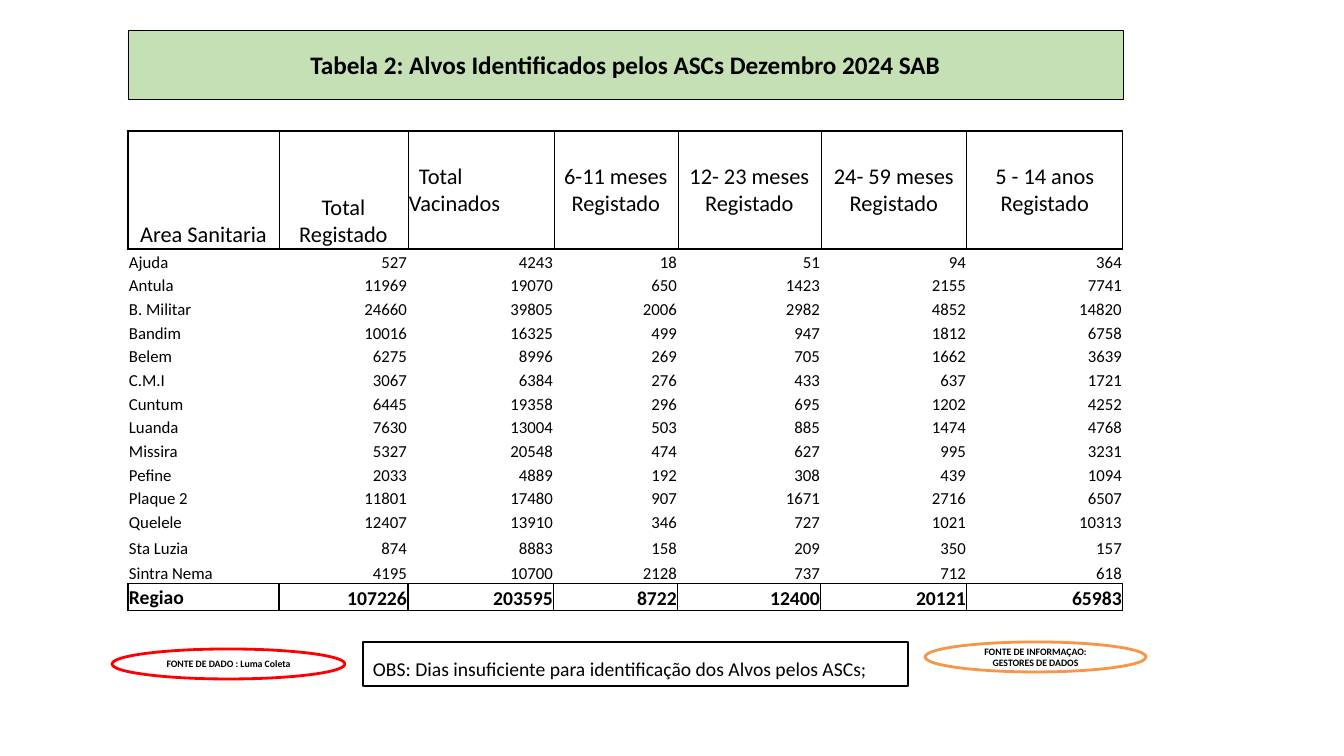
import lxml.etree
import pptx
import pptx.dml.color
import pptx.enum.shapes
import pptx.enum.text
import pptx.oxml.ns
import pptx.util

RGBColor = pptx.dml.color.RGBColor
Pt = pptx.util.Pt
SHAPE = pptx.enum.shapes.MSO_SHAPE
ALIGN = pptx.enum.text.PP_ALIGN
ANCHOR = pptx.enum.text.MSO_ANCHOR
qn = pptx.oxml.ns.qn

EMU_PER_PX = 914400 / 100.8
FONT = "Calibri"
BLACK = RGBColor(0x00, 0x00, 0x00)
WHITE = RGBColor(0xFF, 0xFF, 0xFF)
GREEN = RGBColor(0xC5, 0xE0, 0xB4)
RED = RGBColor(0xFF, 0x00, 0x00)
ORANGE = RGBColor(0xF7, 0x96, 0x46)
NO_STYLE = "{2D5ABB26-0587-4C30-8999-92F81FD0307C}"

COL_WIDTHS = [151, 129, 146, 124, 143, 146, 156]
ROW_HEIGHTS = [118] + [24, 23, 24] * 4 + [26, 25, 27]
HEADERS = ["Area Sanitaria", "Total Registado", "Total Vacinados",
           "6-11 meses Registado", "12- 23 meses Registado",
           "24- 59 meses Registado", "5 - 14 anos Registado"]
AREAS = [
    ("Ajuda", 527, 4243, 18, 51, 94, 364),
    ("Antula", 11969, 19070, 650, 1423, 2155, 7741),
    ("B. Militar", 24660, 39805, 2006, 2982, 4852, 14820),
    ("Bandim", 10016, 16325, 499, 947, 1812, 6758),
    ("Belem", 6275, 8996, 269, 705, 1662, 3639),
    ("C.M.I", 3067, 6384, 276, 433, 637, 1721),
    ("Cuntum", 6445, 19358, 296, 695, 1202, 4252),
    ("Luanda", 7630, 13004, 503, 885, 1474, 4768),
    ("Missira", 5327, 20548, 474, 627, 995, 3231),
    ("Pefine", 2033, 4889, 192, 308, 439, 1094),
    ("Plaque 2", 11801, 17480, 907, 1671, 2716, 6507),
    ("Quelele", 12407, 13910, 346, 727, 1021, 10313),
    ("Sta Luzia", 874, 8883, 158, 209, 350, 157),
    ("Sintra Nema", 4195, 10700, 2128, 737, 712, 618),
]
TOTALS = ("Regiao", 107226, 203595, 8722, 12400, 20121, 65983)


def px(n):
    return pptx.util.Emu(round(n * EMU_PER_PX))


def write(tf, text, size, bold=False, align=ALIGN.LEFT):
    p = tf.paragraphs[0]
    p.alignment = align
    r = p.add_run()
    r.text = text
    r.font.name = FONT
    r.font.size = Pt(size)
    r.font.bold = bold
    r.font.color.rgb = BLACK
    return p


def paint(sp, fill, line, width):
    if fill is None:
        sp.fill.background()
    else:
        sp.fill.solid()
        sp.fill.fore_color.rgb = fill
    sp.line.color.rgb = line
    sp.line.width = Pt(width)


def add_title(slide, text):
    sp = slide.shapes.title
    sp.left, sp.top, sp.width, sp.height = px(128), px(30), px(995), px(69)
    paint(sp, GREEN, BLACK, 0.5)
    sp.text_frame.vertical_anchor = ANCHOR.MIDDLE
    write(sp.text_frame, text, 18, True, ALIGN.CENTER)


def add_box(slide, kind, box, fill, line, width):
    sp = slide.shapes.add_shape(kind, *map(px, box))
    sp.shadow.inherit = False
    paint(sp, fill, line, width)
    sp.text_frame.word_wrap = True
    sp.text_frame.vertical_anchor = ANCHOR.MIDDLE
    return sp


def add_source(slide, text, box, fill, line):
    sp = add_box(slide, SHAPE.OVAL, box, fill, line, 2)
    write(sp.text_frame, text, 7, True, ALIGN.CENTER)


def add_note(slide, text, box):
    tf = add_box(slide, SHAPE.RECTANGLE, box, WHITE, BLACK, 1).text_frame
    tf.vertical_anchor = ANCHOR.BOTTOM
    tf.margin_bottom = px(6)
    write(tf, text, 14)


def set_borders(cell, **widths):
    """Draw the given sides (L, R, T, B); widths are in points."""
    tcPr = cell._tc.get_or_add_tcPr()
    for side in "LRTB":
        ln = lxml.etree.SubElement(tcPr, qn("a:ln" + side))
        if side in widths:
            ln.set("w", str(Pt(widths[side])))
            fill = lxml.etree.SubElement(ln, qn("a:solidFill"))
            lxml.etree.SubElement(fill, qn("a:srgbClr"), val=str(BLACK))
        else:
            lxml.etree.SubElement(ln, qn("a:noFill"))


def cell_borders(row, col, last_row, last_col):
    if row == 0:
        return dict(L=0.5 if col else 1, R=0.5 if col < last_col else 1, T=1, B=1)
    if row == last_row:
        return dict(L=1, R=1, T=1, B=1)
    sides = {}
    if row == 1:
        sides["T"] = 1
    if row == last_row - 1:
        sides["B"] = 1
    return sides


def fill_cell(cell, row, col, value, last_row):
    cell.margin_left = cell.margin_right = cell.margin_top = px(1)
    cell.margin_bottom = 0
    cell.vertical_anchor = ANCHOR.BOTTOM
    if row == 0:
        if col > 1:
            cell.vertical_anchor = ANCHOR.MIDDLE
        align = ALIGN.LEFT if col == 2 else ALIGN.CENTER
        p = write(cell.text_frame, value, 16, align=align)
        if col == 2:
            p._p.get_or_add_pPr().set("indent", str(px(10)))
        return
    total = row == last_row
    if total and col == 0:
        cell.vertical_anchor = ANCHOR.MIDDLE
    write(cell.text_frame, str(value), 14 if total else 12, total,
          ALIGN.RIGHT if col else ALIGN.LEFT)


def add_targets_table(slide):
    rows = [HEADERS, *AREAS, TOTALS]
    last_row, last_col = len(rows) - 1, len(HEADERS) - 1
    frame = slide.shapes.add_table(len(rows), len(HEADERS), px(128), px(131),
                                   px(sum(COL_WIDTHS)), px(sum(ROW_HEIGHTS)))
    table = frame.table
    table.first_row = table.horz_banding = False
    table._tbl.tblPr.find(qn("a:tableStyleId")).text = NO_STYLE
    for column, width in zip(table.columns, COL_WIDTHS):
        column.width = px(width)
    for i, values in enumerate(rows):
        table.rows[i].height = px(ROW_HEIGHTS[i])
        for j, value in enumerate(values):
            cell = table.cell(i, j)
            fill_cell(cell, i, j, value, last_row)
            set_borders(cell, **cell_borders(i, j, last_row, last_col))
            cell.fill.background()


def main():
    prs = pptx.Presentation()
    prs.slide_width, prs.slide_height = px(1344), px(756)
    slide = prs.slides.add_slide(prs.slide_layouts[5])

    # Title band and table
    add_title(slide, "Tabela 2: Alvos Identificados pelos ASCs Dezembro 2024 SAB")
    add_targets_table(slide)

    # Sources and remark under the table
    add_source(slide, "FONTE DE DADO : Luma Coleta", (112, 649, 233, 30), None, RED)
    add_source(slide, "FONTE DE INFORMAÇAO: GESTORES DE DADOS",
               (925, 642, 221, 30), WHITE, ORANGE)
    add_note(slide, "OBS: Dias insuficiente para identificação dos Alvos pelos ASCs;",
             (363, 642, 545, 44))

    prs.save("out.pptx")


if __name__ == "__main__":
    main()
